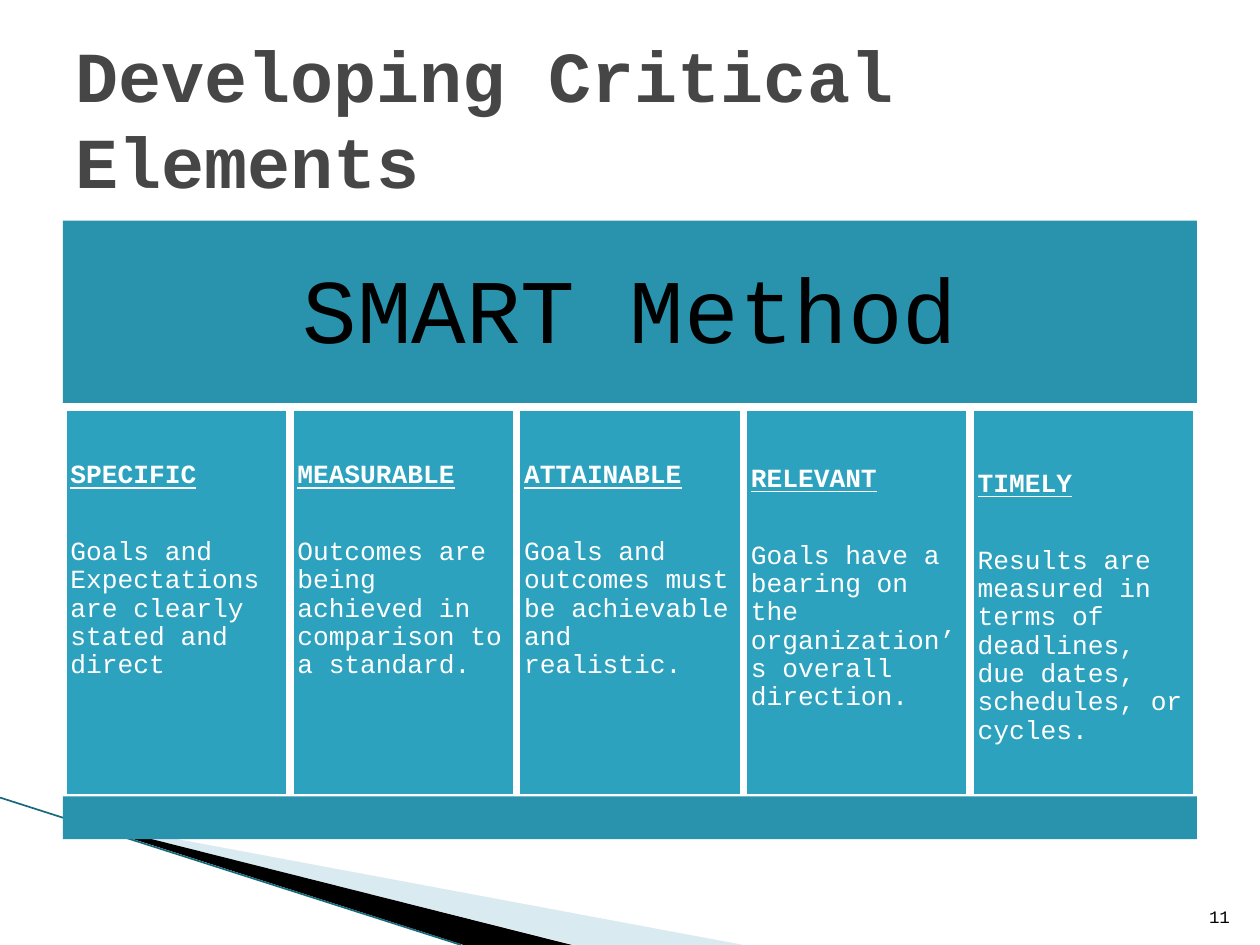
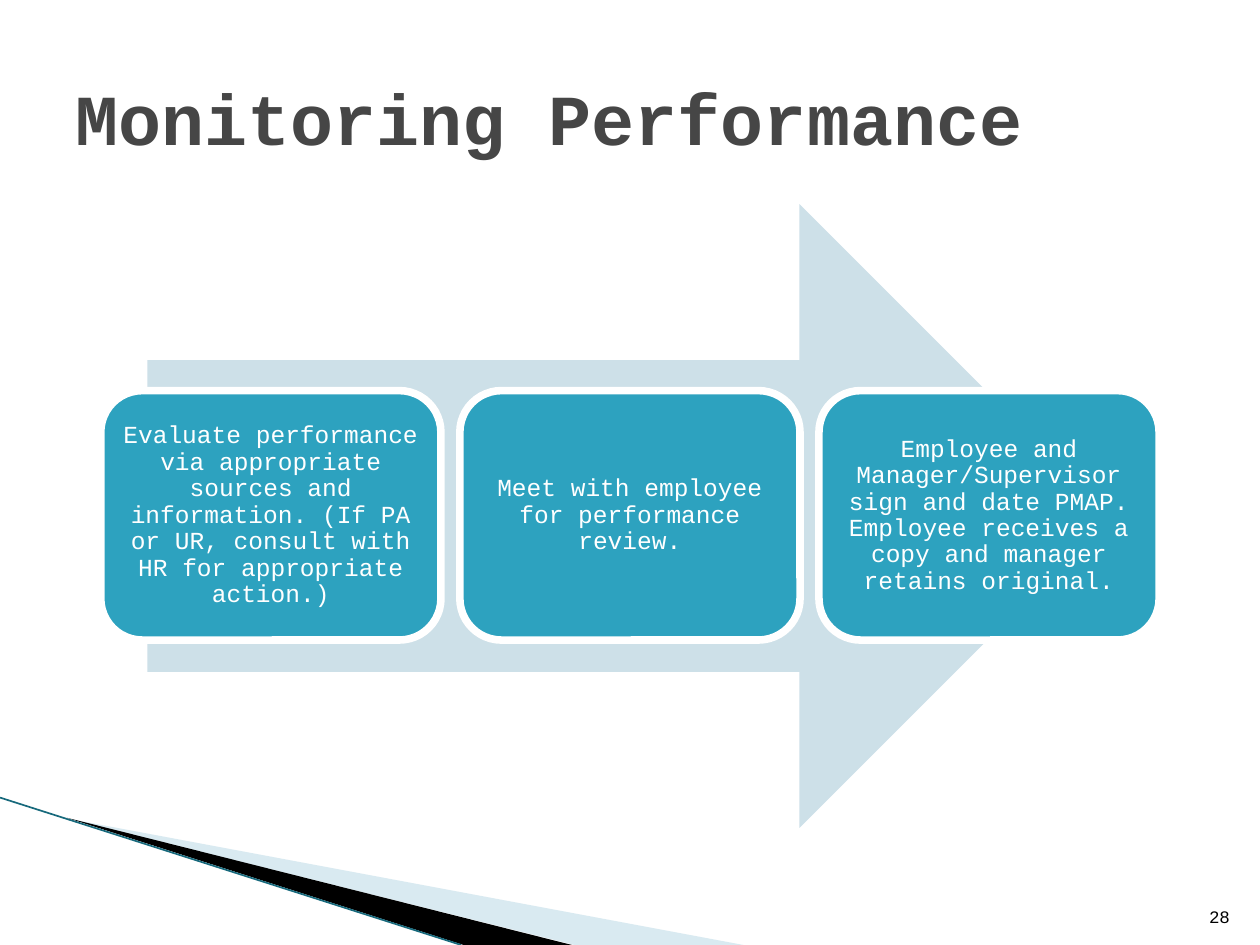
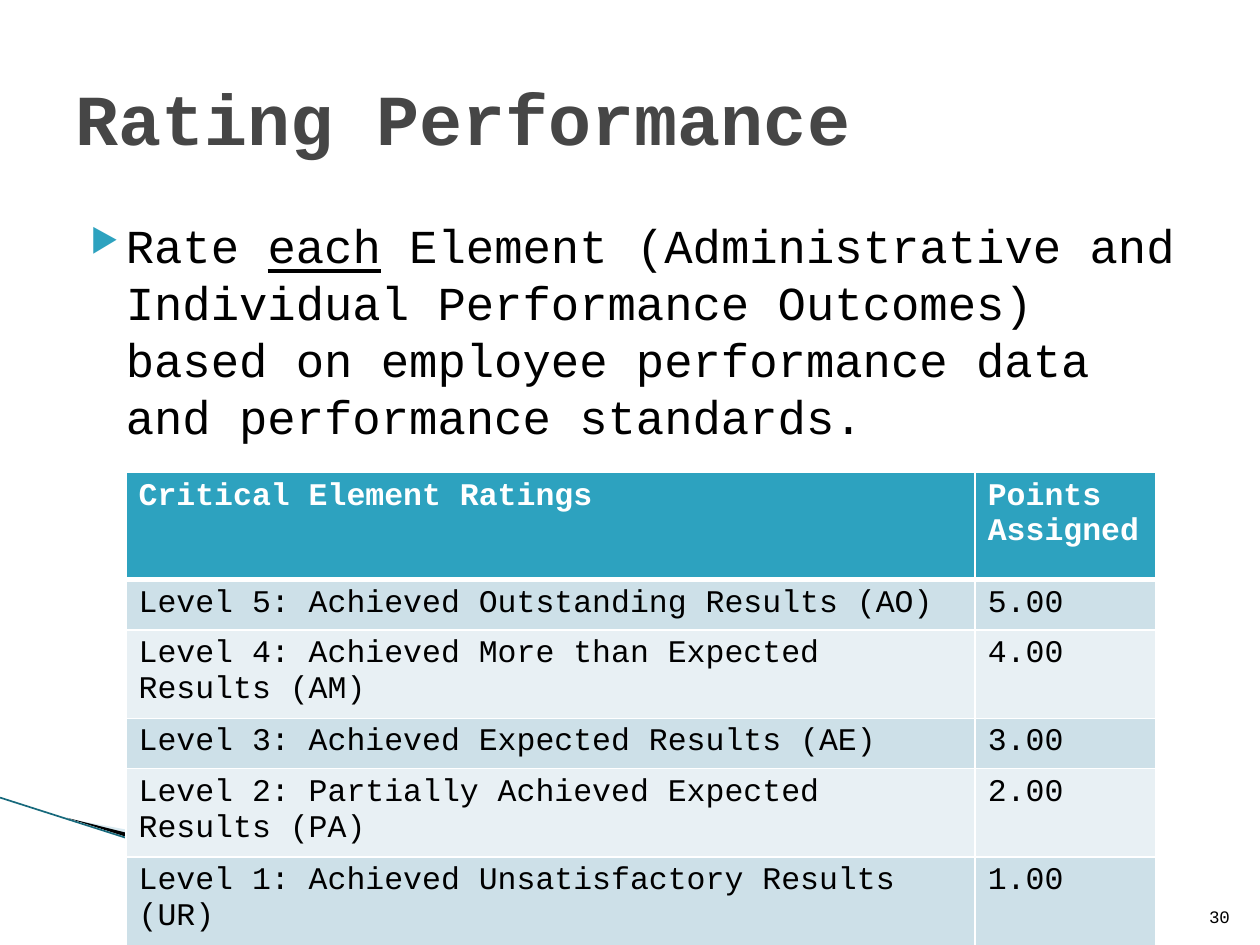
from dataclasses import dataclass

from lxml.etree import SubElement
from pptx import Presentation
from pptx.dml.color import RGBColor
from pptx.enum.shapes import MSO_CONNECTOR, MSO_SHAPE
from pptx.enum.text import MSO_ANCHOR, PP_ALIGN
from pptx.oxml.ns import qn
from pptx.util import Inches, Pt


@dataclass(frozen=True)
class Theme:
    font: str = "Courier New"
    title_color: str = "464646"
    text: str = "000000"
    white: str = "FFFFFF"
    teal: str = "2DA2BF"
    teal_dark: str = "2993AD"
    teal_line: str = "17697C"
    pale: str = "CDE0E8"
    paler: str = "E8F0F4"
    swoosh: str = "A0CBDC"
    title_size: float = 41
    banner_size: float = 52
    body_size: float = 27
    table_size: float = 18
    column_size: float = 15
    step_size: float = 14
    number_size: float = 10
    outline: float = 4.33
    line_spacing: float = 0.9


THEME = Theme()

SMART_COLUMNS = [
    ("SPECIFIC", "Goals and Expectations are clearly stated and direct", 0.43),
    ("MEASURABLE", "Outcomes are being achieved in comparison to a standard.", 0.43),
    ("ATTAINABLE", "Goals and outcomes must be achievable and realistic.", 0.43),
    ("RELEVANT", "Goals have a bearing on the organization’s overall direction.", 0.46),
    ("TIMELY", "Results are measured in terms of deadlines, due dates, schedules, or cycles.", 0.5),
]

MONITORING_STEPS = [
    "Evaluate performance via appropriate sources and information. "
    "(If PA or UR, consult with HR for appropriate action.)",
    "Meet with employee for performance review.",
    "Employee and Manager/Supervisor sign and date PMAP. "
    "Employee receives a copy and manager retains original.",
]

RATINGS = [
    ("Critical Element Ratings", "Points Assigned"),
    ("Level 5: Achieved Outstanding Results (AO)", "5.00"),
    ("Level 4: Achieved More than Expected Results (AM)", "4.00"),
    ("Level 3: Achieved Expected Results (AE)", "3.00"),
    ("Level 2: Partially Achieved Expected Results (PA)", "2.00"),
    ("Level 1: Achieved Unsatisfactory Results (UR)", "1.00"),
]


def rgb(color):
    return RGBColor.from_string(color)


def style_font(font, size, color, bold=False, underline=False):
    font.name = THEME.font
    font.size = Pt(size)
    font.color.rgb = rgb(color)
    font.bold = bold
    font.underline = underline


def style_paragraph(paragraph, size, color, bold=False, underline=False):
    for run in paragraph.runs:
        style_font(run.font, size, color, bold, underline)


def set_frame(text_frame, anchor, inset=None):
    text_frame.word_wrap = True
    text_frame.vertical_anchor = anchor
    if inset is not None:
        text_frame.margin_left = text_frame.margin_right = Inches(inset)
        text_frame.margin_top = text_frame.margin_bottom = Inches(inset)


def paint(shape, fill, outline=None):
    shape.shadow.inherit = False
    shape.fill.solid()
    shape.fill.fore_color.rgb = rgb(fill)
    if outline:
        shape.line.color.rgb = rgb(outline)
        shape.line.width = Pt(THEME.outline)
    else:
        shape.line.fill.background()


def add_block(slide, kind, left, top, width, height, fill, outline=None):
    shape = slide.shapes.add_shape(
        kind, Inches(left), Inches(top), Inches(width), Inches(height))
    paint(shape, fill, outline)
    return shape


def add_text(slide, text, left, top, width, height, anchor, size, color, bold=False):
    box = slide.shapes.add_textbox(
        Inches(left), Inches(top), Inches(width), Inches(height))
    set_frame(box.text_frame, anchor)
    box.text_frame.text = text
    paragraph = box.text_frame.paragraphs[0]
    style_paragraph(paragraph, size, color, bold)
    return paragraph


def fill_centered(shape, text, size, color, inset):
    set_frame(shape.text_frame, MSO_ANCHOR.MIDDLE, inset)
    shape.text_frame.text = text
    paragraph = shape.text_frame.paragraphs[0]
    paragraph.alignment = PP_ALIGN.CENTER
    paragraph.line_spacing = THEME.line_spacing
    style_paragraph(paragraph, size, color)


def add_polygon(slide, points, fill):
    corners = [(Inches(x), Inches(y)) for x, y in points]
    builder = slide.shapes.build_freeform(*corners[0])
    builder.add_line_segments(corners[1:], close=True)
    shape = builder.convert_to_shape()
    paint(shape, fill)
    return shape


def add_corner_swoosh(slide):
    light = add_polygon(slide, [(0.55, 6.5), (5.9, 7.5), (4.56, 7.5)], THEME.swoosh)
    color = light.fill._xPr.find(qn("a:solidFill"))[0]
    SubElement(color, qn("a:alpha"), val="40000")
    add_polygon(slide, [(0.53, 6.49), (4.54, 7.5), (3.68, 7.5)], THEME.text)
    edge = slide.shapes.add_connector(
        MSO_CONNECTOR.STRAIGHT, Inches(0), Inches(6.33), Inches(3.66), Inches(7.5))
    edge.line.color.rgb = rgb(THEME.teal_line)
    edge.line.width = Pt(0.95)
    SubElement(edge._element.spPr, qn("a:effectLst"))


def add_slide(presentation, title, number):
    slide = presentation.slides.add_slide(presentation.slide_layouts[6])
    add_corner_swoosh(slide)
    add_text(slide, title, 0.5, 0.3, 9, 1.25, MSO_ANCHOR.MIDDLE,
             THEME.title_size, THEME.title_color, True)
    paragraph = add_text(slide, number, 9.46, 7.01, 0.4, 0.4, MSO_ANCHOR.BOTTOM,
                         THEME.number_size, THEME.text)
    paragraph.alignment = PP_ALIGN.RIGHT
    return slide


def add_smart_column(slide, left, width, heading, description, top_inset):
    shape = add_block(slide, MSO_SHAPE.RECTANGLE, left, 3.23, width, 3.1,
                      THEME.teal, THEME.white)
    text_frame = shape.text_frame
    set_frame(text_frame, MSO_ANCHOR.TOP, 0.06)
    text_frame.margin_top = Inches(top_inset)
    text_frame.text = heading
    text_frame.add_paragraph().text = description
    for index, paragraph in enumerate(text_frame.paragraphs):
        is_heading = index == 0
        paragraph.alignment = PP_ALIGN.LEFT
        paragraph.line_spacing = THEME.line_spacing
        if not is_heading:
            paragraph.space_before = Pt(27.5)
        style_paragraph(paragraph, THEME.column_size, THEME.white, is_heading, is_heading)


def add_smart_method(slide):
    left, width = 0.5, 9
    banner = add_block(slide, MSO_SHAPE.RECTANGLE, left, 1.75, width, 1.48, THEME.teal_dark)
    fill_centered(banner, "SMART Method", THEME.banner_size, THEME.text, 0.22)
    column_width = width / len(SMART_COLUMNS)
    for index, column in enumerate(SMART_COLUMNS):
        add_smart_column(slide, left + index * column_width, column_width, *column)
    add_block(slide, MSO_SHAPE.RECTANGLE, left, 6.32, width, 0.34, THEME.teal_dark)


def add_monitoring_steps(slide):
    add_block(slide, MSO_SHAPE.RIGHT_ARROW, 1.17, 1.62, 7.65, 4.95, THEME.pale)
    width, gap = 2.7, 0.15
    for index, text in enumerate(MONITORING_STEPS):
        step = add_block(slide, MSO_SHAPE.ROUNDED_RECTANGLE, 0.8 + index * (width + gap),
                         3.1, width, 1.98, THEME.teal, THEME.white)
        fill_centered(step, text, THEME.step_size, THEME.white, 0.06)


def add_bullet(paragraph):
    properties = paragraph._p.get_or_add_pPr()
    properties.set("marL", str(Inches(0.4)))
    properties.set("indent", str(-Inches(0.28)))
    color = SubElement(properties, qn("a:buClr"))
    SubElement(color, qn("a:srgbClr"), val=THEME.teal)
    SubElement(properties, qn("a:buSzPct"), val="68000")
    SubElement(properties, qn("a:buChar"), char="▶")


def add_rating_instruction(slide):
    box = slide.shapes.add_textbox(Inches(0.5), Inches(1.62), Inches(9), Inches(2.1))
    set_frame(box.text_frame, MSO_ANCHOR.TOP)
    box.text_frame.margin_top = Inches(0.1)
    paragraph = box.text_frame.paragraphs[0]
    add_bullet(paragraph)
    parts = ["Rate ", "each", " Element (Administrative and Individual Performance Outcomes) "
             "based on employee performance data and performance standards."]
    for part in parts:
        run = paragraph.add_run()
        run.text = part
        style_font(run.font, THEME.body_size, THEME.text, underline=part == "each")


def set_borders(cell, bottom_width):
    properties = cell._tc.get_or_add_tcPr()
    widths = {"a:lnL": 1, "a:lnR": 1, "a:lnT": 1, "a:lnB": bottom_width}
    for index, (side, width) in enumerate(widths.items()):
        line = SubElement(properties, qn(side), w=str(Pt(width)))
        fill = SubElement(line, qn("a:solidFill"))
        SubElement(fill, qn("a:srgbClr"), val=THEME.white)
        properties.insert(index, line)


def add_ratings_table(slide):
    column_widths = [6.74, 1.43]
    row_heights = [0.85, 0.4, 0.67, 0.4, 0.67, 0.67]
    frame = slide.shapes.add_table(
        len(RATINGS), len(column_widths), Inches(1), Inches(3.75),
        Inches(sum(column_widths)), Inches(sum(row_heights)))
    table = frame.table
    for column, width in zip(table.columns, column_widths):
        column.width = Inches(width)
    for row_index, values in enumerate(RATINGS):
        table.rows[row_index].height = Inches(row_heights[row_index])
        is_header = row_index == 0
        band = THEME.pale if row_index % 2 else THEME.paler
        for column_index, value in enumerate(values):
            cell = table.cell(row_index, column_index)
            cell.text = value
            cell.fill.solid()
            cell.fill.fore_color.rgb = rgb(THEME.teal if is_header else band)
            set_borders(cell, 3 if is_header else 1)
            style_paragraph(cell.text_frame.paragraphs[0], THEME.table_size,
                            THEME.white if is_header else THEME.text, is_header)


def main():
    presentation = Presentation()
    presentation.slide_width = Inches(10)
    presentation.slide_height = Inches(7.5)

    add_smart_method(add_slide(presentation, "Developing Critical Elements", "11"))
    add_monitoring_steps(add_slide(presentation, "Monitoring Performance", "28"))
    rating_slide = add_slide(presentation, "Rating Performance", "30")
    add_rating_instruction(rating_slide)
    add_ratings_table(rating_slide)

    presentation.save("out.pptx")


if __name__ == "__main__":
    main()
